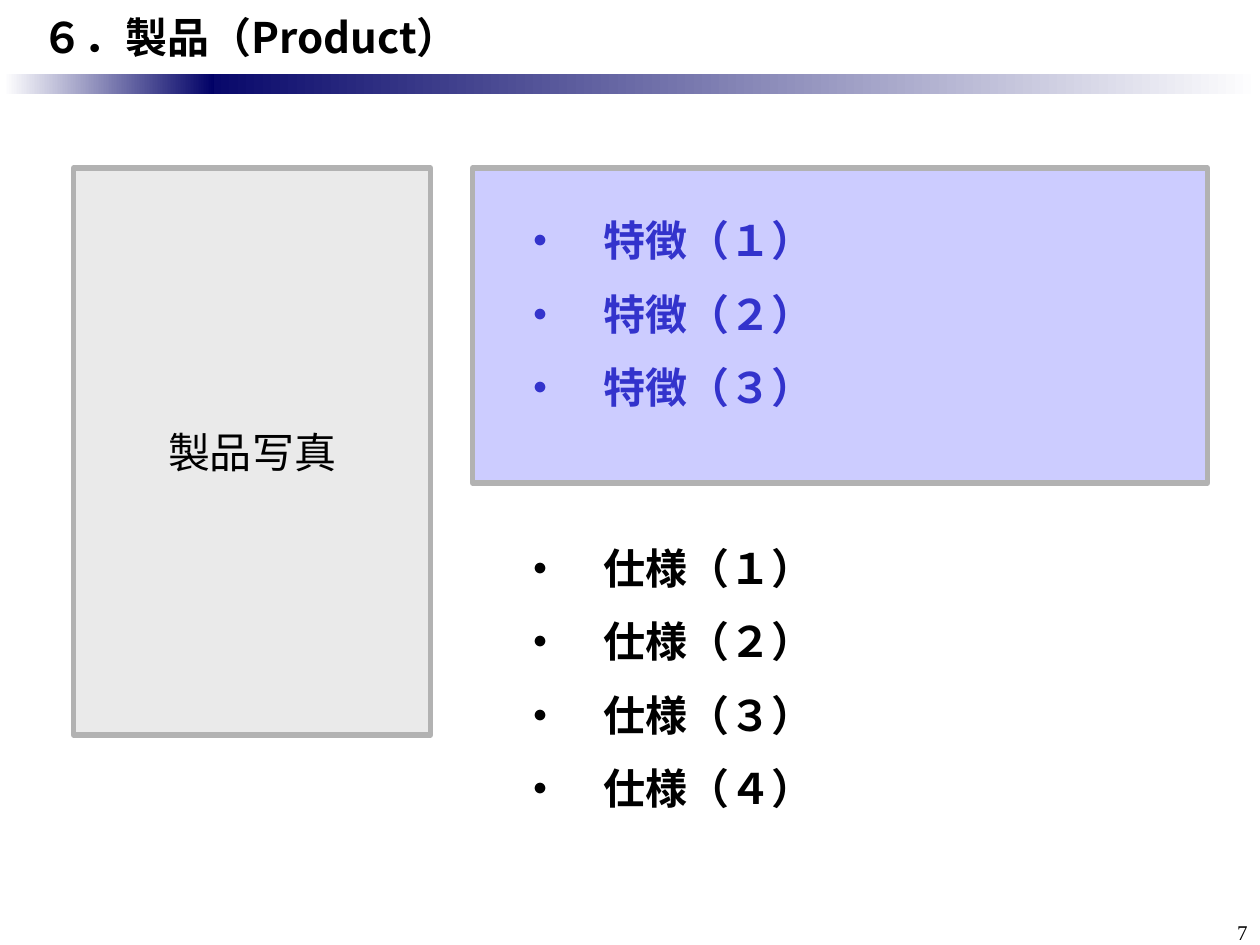
from dataclasses import dataclass

from lxml import etree
from pptx import Presentation
from pptx.dml.color import RGBColor
from pptx.enum.shapes import MSO_SHAPE
from pptx.enum.text import MSO_ANCHOR, PP_ALIGN
from pptx.oxml.ns import qn
from pptx.util import Inches, Pt

RECTANGLE = MSO_SHAPE.RECTANGLE
TOP, MIDDLE = MSO_ANCHOR.TOP, MSO_ANCHOR.MIDDLE
LEFT, CENTER, RIGHT = PP_ALIGN.LEFT, PP_ALIGN.CENTER, PP_ALIGN.RIGHT
SLIDE_WIDTH, SLIDE_HEIGHT = Inches(10), Inches(7.5)
COLUMNS, ROWS = 120, 90


@dataclass(frozen=True)
class Theme:
    sans: str = "Noto Sans CJK JP"
    serif: str = "Times New Roman"
    body_size: int = 24
    number_size: int = 12
    border_width: int = 3
    item_gap: float = 13.25
    black: str = "000000"
    white: str = "FFFFFF"
    navy: str = "000066"
    border: str = "B2B2B2"
    feature_fill: str = "CCCCFF"
    feature_text: str = "3333CC"
    photo_fill: str = "EAEAEA"


THEME = Theme()


def rgb(color):
    return RGBColor.from_string(color)


def grid(column, row, columns, rows):
    return (
        int(SLIDE_WIDTH * column / COLUMNS),
        int(SLIDE_HEIGHT * row / ROWS),
        int(SLIDE_WIDTH * columns / COLUMNS),
        int(SLIDE_HEIGHT * rows / ROWS),
    )


def add_text(shape, lines, color=THEME.black, size=THEME.body_size, font=THEME.sans,
             bold=False, align=LEFT, anchor=TOP, insets=(0.1, 0.05), wrap=True, gap=0):
    frame = shape.text_frame
    frame.text = "\n".join(lines)
    frame.word_wrap = wrap
    frame.vertical_anchor = anchor
    frame.margin_left, frame.margin_top = map(Inches, insets)
    frame.margin_right, frame.margin_bottom = Inches(0.1), Inches(0.05)
    for paragraph in frame.paragraphs:
        paragraph.alignment = align
        paragraph.space_after = Pt(gap)
        for run in paragraph.runs:
            run.font.name = font
            run.font.size = Pt(size)
            run.font.bold = bold
            run.font.color.rgb = rgb(color)
            east_asian = etree.Element(qn("a:ea"), typeface=THEME.sans)
            run.font._element.find(qn("a:latin")).addnext(east_asian)


def add_label(slide, place, text, **style):
    add_text(slide.shapes.add_textbox(*grid(*place)), [text], **style)


def add_panel(slide, place, fill, border=None):
    shape = slide.shapes.add_shape(RECTANGLE, *grid(*place))
    shape.shadow.inherit = False
    shape.fill.solid()
    shape.fill.fore_color.rgb = rgb(fill)
    if border:
        shape.line.color.rgb = rgb(border)
        shape.line.width = Pt(THEME.border_width)
    else:
        shape.line.fill.background()
    return shape


def add_gradient_bar(slide, place, colors):
    shape = add_panel(slide, place, THEME.white)
    shape.fill.gradient()
    shape.fill.gradient_angle = 0
    for position, (stop, color) in enumerate(zip(shape.fill.gradient_stops, colors)):
        stop.position = position
        stop.color.rgb = rgb(color)


def add_item_list(shape, name, numbers, color, top_inset):
    items = [f"・　{name}（{number}）" for number in numbers]
    add_text(shape, items, color=color, bold=True,
             insets=(0.37, top_inset), gap=THEME.item_gap)


def main():
    presentation = Presentation()
    presentation.slide_width, presentation.slide_height = SLIDE_WIDTH, SLIDE_HEIGHT
    slide = presentation.slides.add_slide(presentation.slide_layouts[6])

    add_gradient_bar(slide, (17, 7, 103, 2), (THEME.navy, THEME.white))
    add_gradient_bar(slide, (0.4, 7, 20, 2), (THEME.white, THEME.navy))
    add_label(slide, (113, 87, 7, 3), "7", size=THEME.number_size,
              font=THEME.serif, align=RIGHT)
    add_label(slide, (0, 0, 120, 7), "６．製品（Product）", bold=True,
              anchor=MIDDLE, insets=(0.33, 0.05))

    features = add_panel(slide, (45, 16, 70, 30), THEME.feature_fill, THEME.border)
    add_item_list(features, "特徴", "１２３", THEME.feature_text, 0.37)
    specifications = add_panel(slide, (45, 49, 70, 35), THEME.white)
    add_item_list(specifications, "仕様", "１２３４", THEME.black, 0.22)

    photo = add_panel(slide, (7, 16, 34, 54), THEME.photo_fill, THEME.border)
    add_text(photo, ["製品写真"], font=THEME.serif, align=CENTER,
             anchor=MIDDLE, wrap=False)

    presentation.save("out.pptx")


if __name__ == "__main__":
    main()
